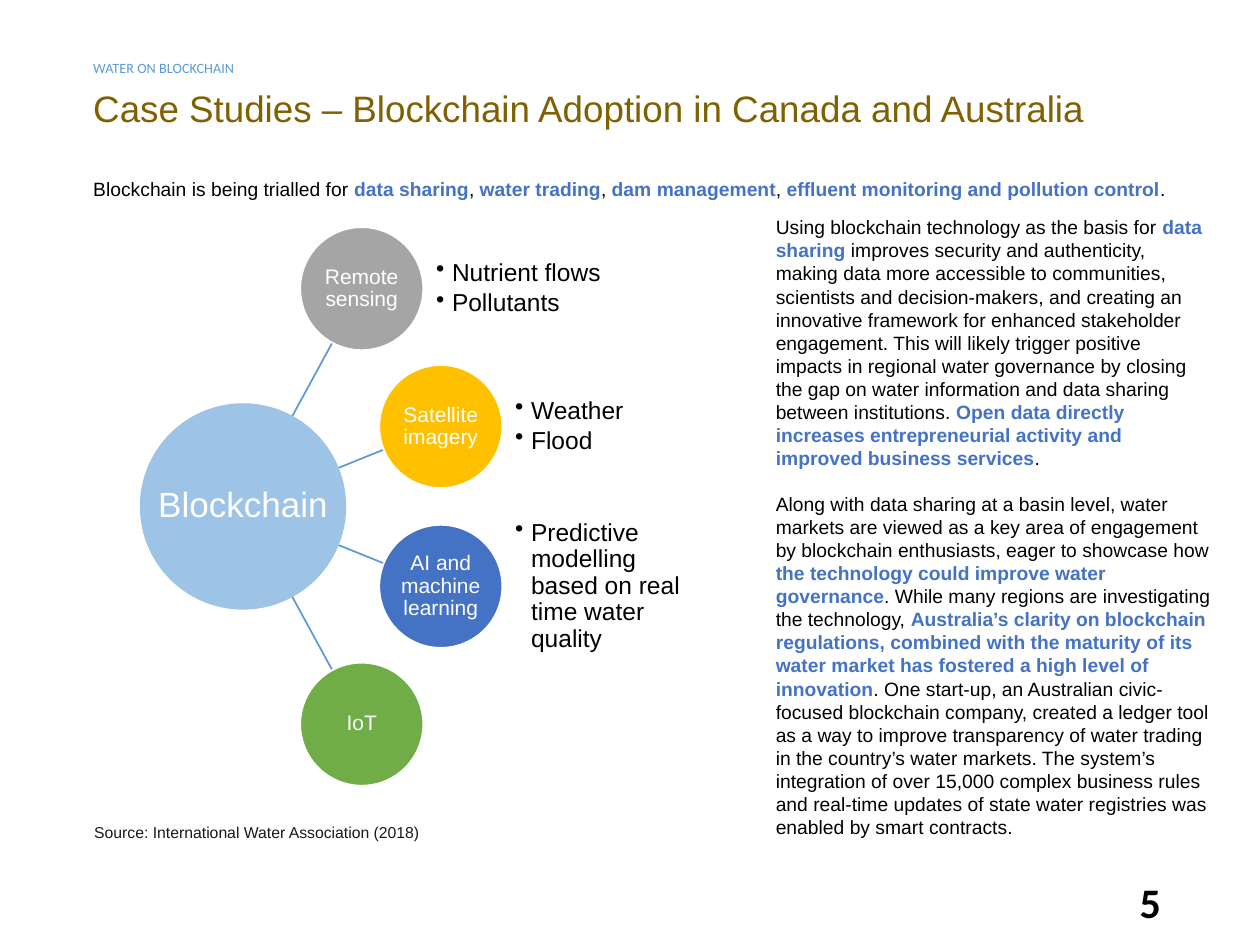
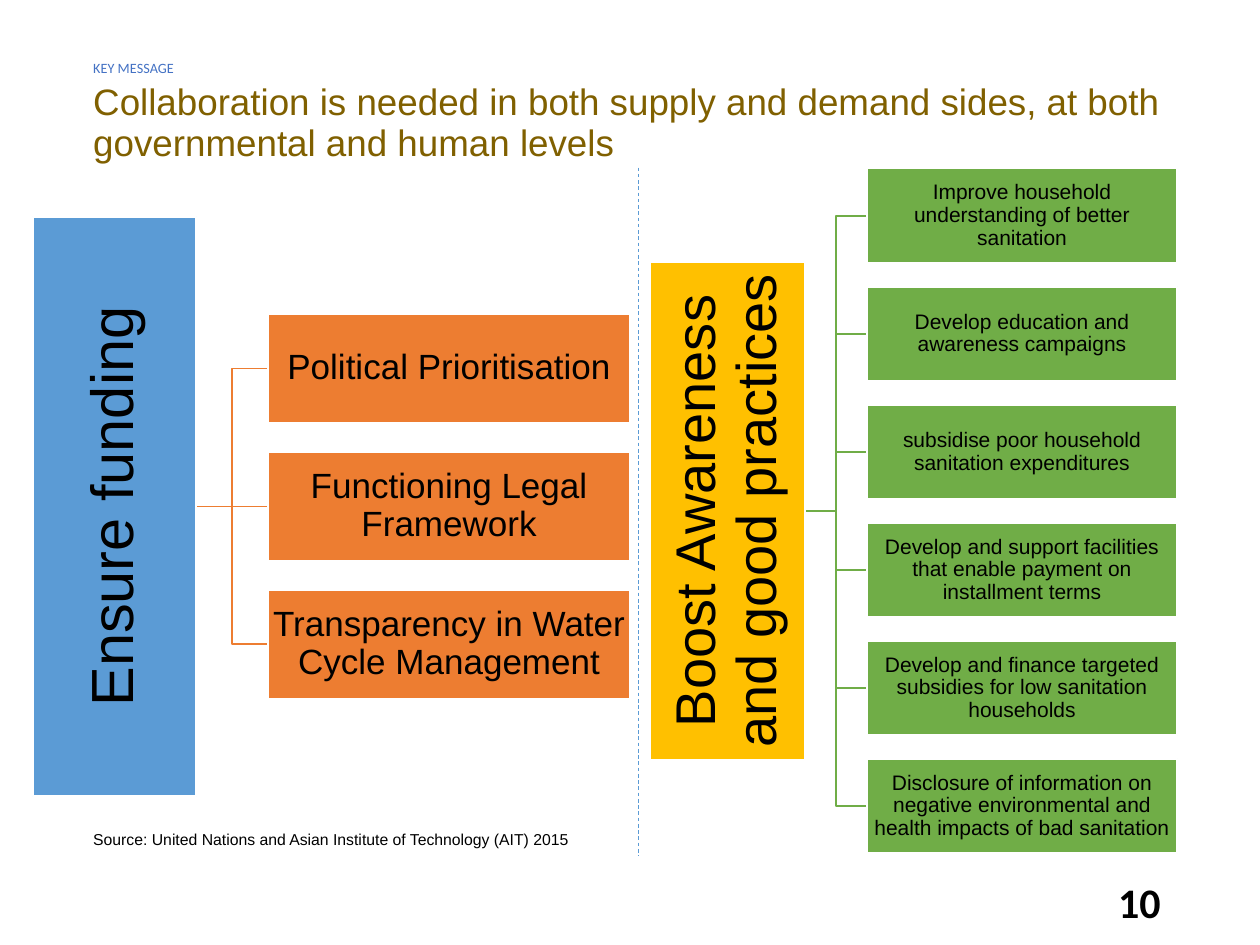
"""Build two slides on blockchain for water and on collaboration for sanitation."""
from dataclasses import dataclass
from math import cos, radians, sin

from pptx import Presentation
from pptx.dml.color import RGBColor
from pptx.enum.dml import MSO_LINE
from pptx.enum.shapes import MSO_CONNECTOR, MSO_SHAPE
from pptx.enum.text import MSO_ANCHOR, PP_ALIGN
from pptx.oxml.ns import qn
from pptx.util import Cm, Pt


@dataclass(frozen=True)
class Theme:
    """Fonts, colours and type sizes."""
    body_font: str = "Arial"
    accent_font: str = "Calibri"
    black: str = "000000"
    white: str = "FFFFFF"
    charcoal: str = "191919"
    brown: str = "806000"
    sky: str = "5B9BD5"
    pale_sky: str = "9DC3E6"
    blue: str = "4472C4"
    grey: str = "A5A5A5"
    gold: str = "FFC000"
    green: str = "70AD47"
    orange: str = "ED7D31"
    kicker: float = 8.1
    source: float = 9
    body: float = 11
    label: float = 12
    bullet: float = 14
    large: float = 20
    title: float = 21
    number: float = 24


T = Theme()
TITLE_LEFT, TITLE_WIDTH = 1.63, 22.3
TIGHT = 0.03

LEAD = ("Blockchain is being trialled for *data sharing*, *water trading*, "
        "*dam management*, *effluent monitoring and pollution control*.")
BODY = [
    "Using blockchain technology as the basis for *data sharing *improves security and "
    "authenticity, making data more accessible to communities, scientists and "
    "decision-makers, and creating an innovative framework for enhanced stakeholder "
    "engagement. This will likely trigger positive impacts in regional water governance "
    "by closing the gap on water information and data sharing between institutions. "
    "*Open data directly increases entrepreneurial activity and improved business "
    "services*.",
    "Along with data sharing at a basin level, water markets are viewed as a key area of "
    "engagement by blockchain enthusiasts, eager to showcase how *the technology could "
    "improve water governance*. While many regions are investigating the technology, "
    "*Australia’s clarity on blockchain regulations, combined with the maturity of its "
    "water market has fostered a high level of innovation*. One start-up, an Australian "
    "civic-focused blockchain company, created a ledger tool as a way to improve "
    "transparency of water trading in the country’s water markets. The system’s "
    "integration of over 15,000 complex business rules and real-time updates of state "
    "water registries was enabled by smart contracts.",
]
NODES = [
    (-61.4, 5, "Remote sensing", T.grey, ["Nutrient flows", "Pollutants"]),
    (-22, 4.3, "Satellite imagery", T.gold, ["Weather", "Flood"]),
    (22, 4.3, "AI and machine learning", T.blue,
     ["Predictive modelling based on real time water quality"]),
    (61.4, 5, "IoT", T.green, []),
]
FUNDING = ["Political Prioritisation", "Functioning Legal Framework",
           "Transparency in Water Cycle Management"]
AWARENESS = [
    "Improve household understanding of better sanitation",
    "Develop education and awareness campaigns",
    "subsidise poor household sanitation expenditures",
    "Develop and support facilities that enable payment on installment terms",
    "Develop and finance targeted subsidies for low sanitation households",
    "Disclosure of information on negative environmental and health impacts of bad "
    "sanitation",
]


def apply(obj, values):
    """Set each attribute of obj from a dict."""
    for name, value in values.items():
        setattr(obj, name, value)


def add_bullet(p):
    """Give a paragraph a hanging round bullet."""
    pPr = p._p.get_or_add_pPr()
    pPr.set("marL", str(Cm(0.32)))
    pPr.set("indent", str(-Cm(0.32)))
    bullet = pPr.makeelement(qn("a:buChar"), {"char": "•"})
    pPr.append(bullet)


def write(tf, paragraphs, size, color=T.black, font=T.body_font, bold=False,
          inset=None, bullets=False, gap=0, frame=None, **para):
    """Fill a text frame; parts between asterisks are highlighted."""
    apply(tf, {"word_wrap": True, **(frame or {})})
    if inset is not None:
        sides = ("left", "top", "right", "bottom")
        apply(tf, {f"margin_{side}": Cm(inset) for side in sides})
    for i, text in enumerate(paragraphs):
        p = tf.paragraphs[0] if i == 0 else tf.add_paragraph()
        if bullets:
            add_bullet(p)
        apply(p, para)
        if i:
            p.space_before = Pt(gap)
        for j, part in enumerate(text.split("*")):
            if part:
                marked = j % 2 == 1
                r = p.add_run()
                r.text = part
                apply(r.font, {"name": font, "size": Pt(size), "bold": bold or marked})
                r.font.color.rgb = RGBColor.from_string(T.blue if marked else color)


def add_text(s, x, y, w, h, paragraphs, size, **style):
    """Add a text box."""
    sp = s.shapes.add_textbox(Cm(x), Cm(y), Cm(w), Cm(h))
    write(sp.text_frame, paragraphs, size, **style)


def add_block(s, kind, cx, cy, w, h, fill, text, size, color=T.black, wrap=True,
              rotation=0, outline=T.white):
    """Add a filled shape with a centred label around a centre point."""
    sp = s.shapes.add_shape(kind, Cm(cx - w / 2), Cm(cy - h / 2), Cm(w), Cm(h))
    sp.shadow.inherit = False
    sp.rotation = rotation
    sp.fill.solid()
    sp.fill.fore_color.rgb = RGBColor.from_string(fill)
    if outline:
        sp.line.color.rgb = RGBColor.from_string(outline)
        sp.line.width = Pt(1)
    else:
        sp.line.fill.background()
    write(sp.text_frame, [text], size, color=color, inset=TIGHT,
          frame={"word_wrap": wrap, "vertical_anchor": MSO_ANCHOR.MIDDLE},
          alignment=PP_ALIGN.CENTER, line_spacing=0.9)


def add_line(s, start, end, color, width=1, kind=MSO_CONNECTOR.STRAIGHT, dash=None):
    """Add a connector between two points."""
    sp = s.shapes.add_connector(kind, *(Cm(v) for v in (*start, *end)))
    sp.line.color.rgb = RGBColor.from_string(color)
    apply(sp.line, {"width": Pt(width), "dash_style": dash})
    spPr = sp._element.spPr
    spPr.append(spPr.makeelement(qn("a:effectLst"), {}))


def add_frame(prs, kicker, kicker_color, title, title_top, number):
    """Add a slide with its kicker, title and page number."""
    s = prs.slides.add_slide(prs.slide_layouts[6])
    add_text(s, TITLE_LEFT, 1.12, TITLE_WIDTH, 0.43, [kicker], T.kicker,
             color=kicker_color, font=T.accent_font, line_spacing=Pt(12),
             frame={"vertical_anchor": MSO_ANCHOR.MIDDLE})
    add_text(s, TITLE_LEFT, title_top, TITLE_WIDTH + 0.18, 1.1, [title], T.title,
             color=T.brown, line_spacing=Pt(23))
    add_text(s, 17.93, 17.65, 5.72, 1.02, [number], T.number, font=T.accent_font,
             bold=True, alignment=PP_ALIGN.RIGHT, line_spacing=0.9)
    return s


def add_hub(s, cx, cy, hub_radius, node_radius):
    """Add the blockchain hub with its spokes, nodes and bullet lists."""
    def polar(angle, distance):
        """Return the point at an angle and distance from the hub centre."""
        return (cx + distance * cos(radians(angle)), cy + distance * sin(radians(angle)))

    for angle, distance, *_ in NODES:
        add_line(s, polar(angle, 1.65), polar(angle, distance - node_radius), T.sky)
    add_block(s, MSO_SHAPE.OVAL, cx, cy, 2 * hub_radius, 2 * hub_radius, T.pale_sky,
              "Blockchain", T.large, color=T.white, wrap=False, outline=None)
    size = 2 * node_radius
    for angle, distance, name, fill, items in NODES:
        x, y = polar(angle, distance)
        add_block(s, MSO_SHAPE.OVAL, x, y, size, size, fill, name, T.label, color=T.white)
        if items:
            add_text(s, x + 1.5, y - node_radius, 1.5 * size, size, items, T.bullet,
                     inset=0, bullets=True, line_spacing=0.9, space_after=Pt(2.1),
                     frame={"vertical_anchor": MSO_ANCHOR.MIDDLE})


def add_tree(s, root, root_size, root_fill, cx, cy, length, breadth,
             items, item_size, item_fill, left, w, h, pitch):
    """Add a sideways root bar joined to an evenly spaced column of boxes."""
    rows = [(text, cy + (i - (len(items) - 1) / 2) * pitch)
            for i, text in enumerate(items)]
    for _, y in rows:
        kind = MSO_CONNECTOR.STRAIGHT if y == cy else MSO_CONNECTOR.ELBOW
        add_line(s, (cx + breadth / 2, cy), (left, y), item_fill, kind=kind)
    add_block(s, MSO_SHAPE.RECTANGLE, cx, cy, length, breadth, root_fill, root,
              root_size, rotation=270)
    for text, y in rows:
        add_block(s, MSO_SHAPE.RECTANGLE, left + w / 2, y, w, h, item_fill, text,
                  item_size)


def build_case_studies(prs):
    """Build the case studies slide."""
    s = add_frame(prs, "WATER ON BLOCKCHAIN", T.sky,
                  "Case Studies – Blockchain Adoption in Canada and Australia", 1.68, "5")
    add_text(s, TITLE_LEFT, 3.45, TITLE_WIDTH, 0.75, [LEAD], T.body)
    add_text(s, 1.65, 16.46, 11.48, 0.64,
             ["Source: International Water Association (2018)"], T.source,
             color=T.charcoal)
    add_text(s, 15.39, 4.22, 9.3, 13.4, BODY, T.body, gap=12.6)
    add_hub(s, 4.9, 10.21, 2.08, 1.24)


def build_collaboration(prs):
    """Build the key message slide."""
    s = add_frame(prs, "KEY MESSAGE", T.blue,
                  "Collaboration is needed in both supply and demand sides, at both "
                  "governmental and human levels", 1.55, "10")
    add_text(s, TITLE_LEFT, 16.61, 17.12, 0.64,
             ["Source: United Nations and Asian Institute of Technology (AIT) 2015"],
             T.source)
    add_tree(s, "Ensure funding", 34, T.sky, 2.31, 10.21, 11.68, 3.3,
             FUNDING, T.large, T.orange, 5.41, 7.29, 2.2, 2.78)
    add_tree(s, "Boost Awareness and good practices", 32, T.gold, 14.67, 10.3, 10.03, 3.12,
             AWARENESS, T.label, T.green, 17.48, 6.25, 1.9, 2.38)
    add_line(s, (12.88, 3.38), (12.88, 17.25), T.sky, width=0.5, dash=MSO_LINE.DASH)


def main():
    """Build and save the presentation."""
    prs = Presentation()
    apply(prs, {"slide_width": Cm(25.4), "slide_height": Cm(19.05)})
    build_case_studies(prs)
    build_collaboration(prs)
    prs.save("out.pptx")


if __name__ == "__main__":
    main()
